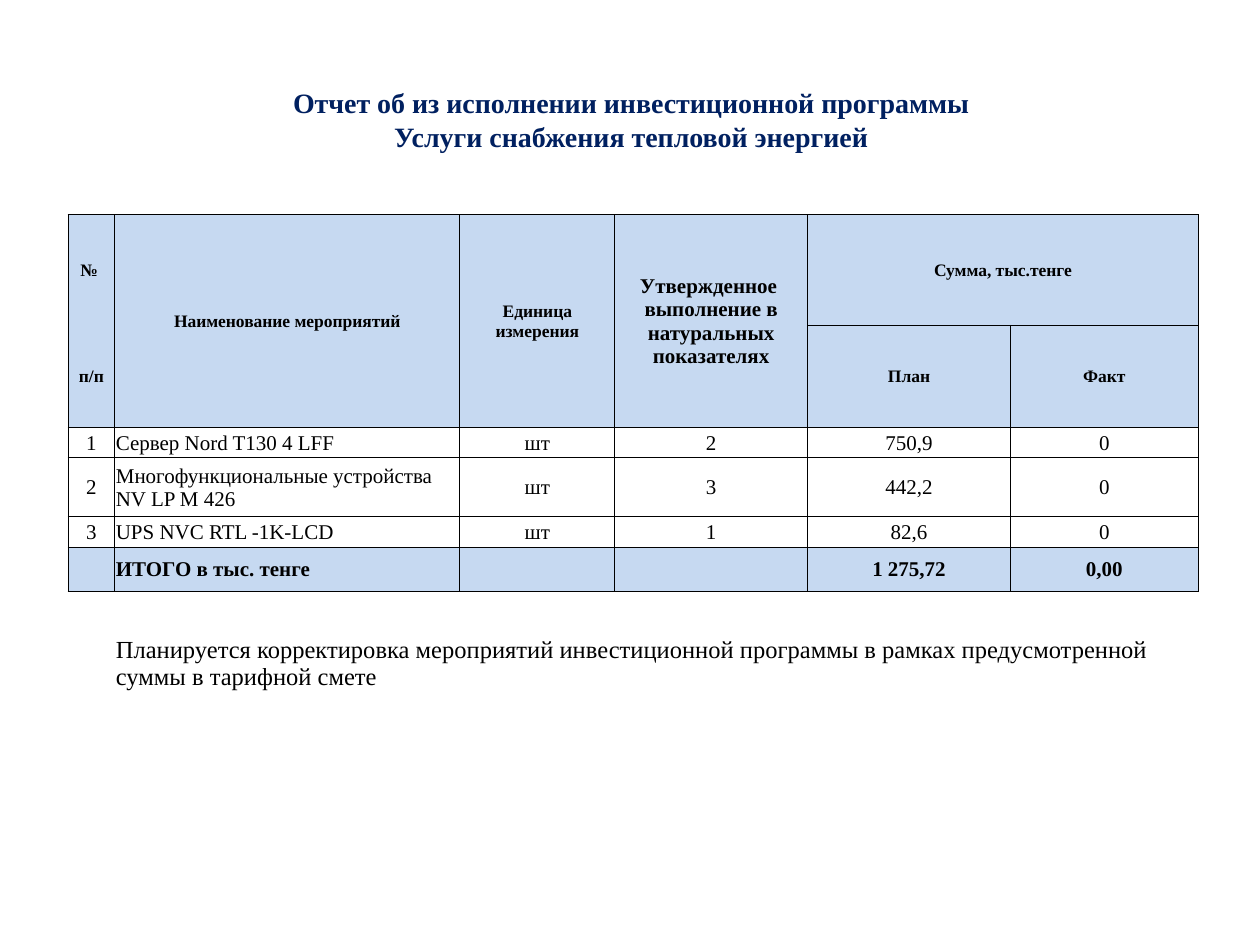
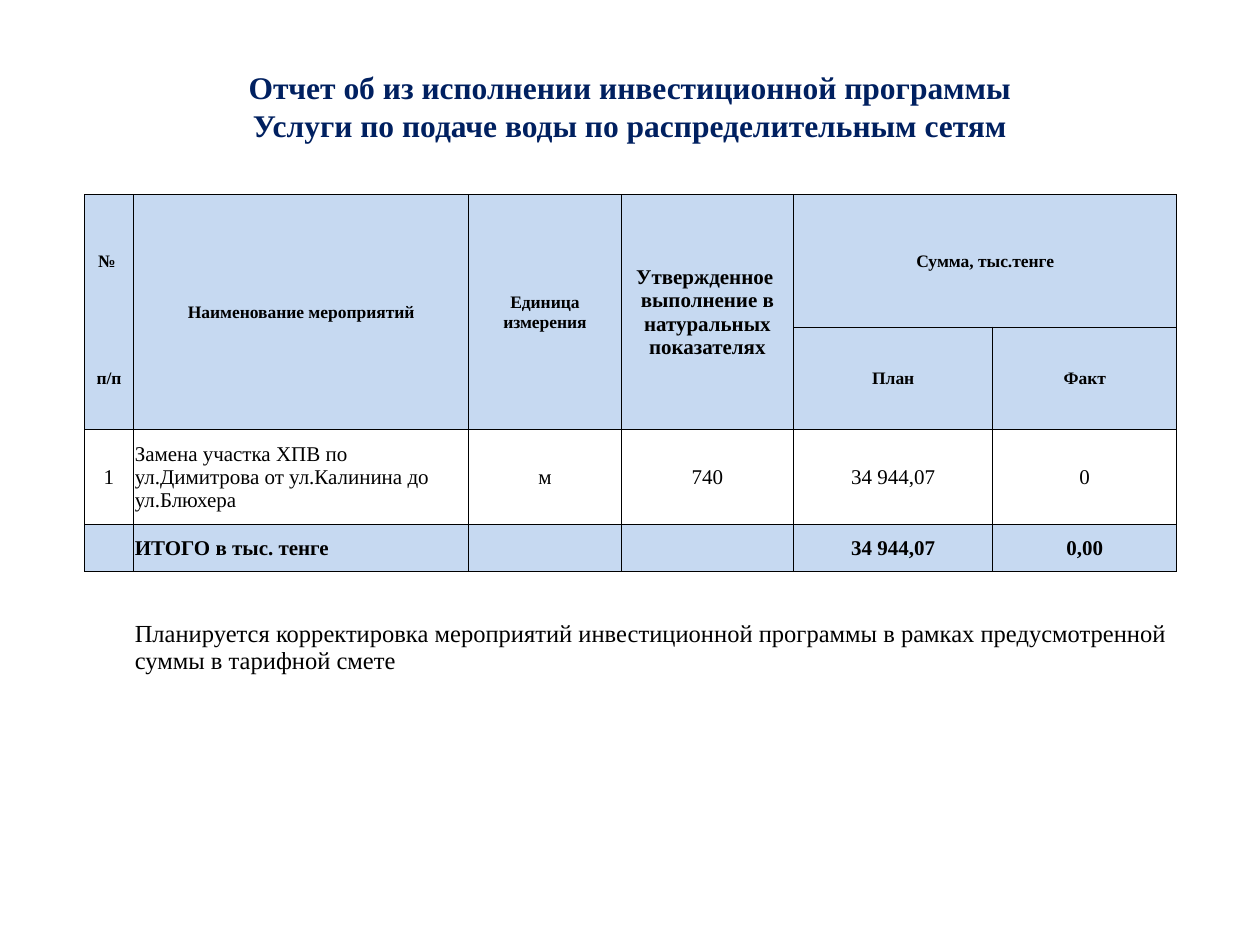
import itertools

import lxml.etree
import pptx
import pptx.dml.color
import pptx.enum.text
import pptx.oxml.ns
import pptx.util

SLIDE_WIDTH = pptx.util.Inches(10)
SLIDE_HEIGHT = pptx.util.Inches(7.5)
FONT_NAME = "Times New Roman"
NAVY, BLACK, PALE_BLUE = "002060", "000000", "C6D9F1"
ALIGN = pptx.enum.text.PP_ALIGN
MIDDLE = pptx.enum.text.MSO_ANCHOR.MIDDLE
ALL_SIDES = "LRTB"

TITLE_START = "Отчет об из исполнении инвестиционной программы"
HEADINGS = [
    ["№ ", "Наименование мероприятий", "Единица измерения",
     "Утвержденное  выполнение в натуральных показателях", "Сумма, тыс.тенге", ""],
    ["п/п", "", "", "", "План", "Факт"],
]
TOTAL_LABEL = "ИТОГО в тыс. тенге"
NOTE = ("Планируется корректировка мероприятий инвестиционной программы "
        "в рамках предусмотренной суммы в тарифной смете")
NOTE_ROWS = 3

REPORTS = [
    {
        "service": "Услуги снабжения тепловой энергией",
        "title_size": 16,
        "title_box": (0.051, 0.08, 0.9, 0.092),
        "table_box": (0.054, 0.227, 0.897, 0.513),
        "columns": [37, 274, 123, 153, 161, 149],
        "rows": [88, 75, 24, 47, 24, 35, 23, 23, 23, 23],
        "items": [
            ["1", "Сервер Nord T130 4 LFF", "шт", "2", "750,9", "0"],
            ["2", "Многофункциональные устройства NV LP M 426", "шт", "3", "442,2", "0"],
            ["3", "UPS NVC RTL -1K-LCD", "шт", "1", "82,6", "0"],
        ],
        "total": "1 275,72",
    },
    {
        "service": "Услуги по подаче воды по распределительным сетям",
        "title_size": 18,
        "title_box": (0.05, 0.04, 0.9, 0.145),
        "table_box": (0.067, 0.206, 0.867, 0.519),
        "columns": [39, 266, 121, 137, 158, 146],
        "rows": [105, 75, 76, 37, 24, 24, 24, 24],
        "items": [
            ["1", "Замена участка ХПВ по ул.Димитрова от ул.Калинина до ул.Блюхера",
             "м", "740", "34 944,07", "0"],
        ],
        "total": "34 944,07",
    },
]


def color(hex_string):
    """Turn a hex string into a colour."""
    return pptx.dml.color.RGBColor.from_string(hex_string)


def place(box):
    """Turn shares of the slide into left, top, width and height."""
    sizes = itertools.cycle((SLIDE_WIDTH, SLIDE_HEIGHT))
    return [round(share * size) for share, size in zip(box, sizes)]


def write_text(text_frame, text, hex_color, align, size, bold):
    """Write one formatted paragraph."""
    paragraph = text_frame.paragraphs[0]
    paragraph.alignment = align
    if not text:
        lxml.etree.SubElement(paragraph._p, pptx.oxml.ns.qn("a:endParaRPr"), sz="1000")
        return
    paragraph.text = text
    formats = {"name": FONT_NAME, "size": pptx.util.Pt(size), "bold": bold}
    for run in paragraph.runs:
        for name, value in formats.items():
            setattr(run.font, name, value)
        run.font.color.rgb = color(hex_color)


def set_borders(cell, drawn_sides):
    """Draw thin black lines on the named sides and clear the others."""
    qualify = pptx.oxml.ns.qn
    properties = cell._tc.get_or_add_tcPr()
    for side in ALL_SIDES:
        line = lxml.etree.SubElement(properties, qualify(f"a:ln{side}"), w=str(pptx.util.Pt(0.5)))
        if side in drawn_sides:
            fill = lxml.etree.SubElement(line, qualify("a:solidFill"))
            lxml.etree.SubElement(fill, qualify("a:srgbClr"), val=BLACK)
        else:
            lxml.etree.SubElement(line, qualify("a:noFill"))


def format_cell(cell, text="", fill=None, sides=ALL_SIDES, align=ALIGN.CENTER, size=12, bold=False):
    """Give a cell its text, margins, borders and fill."""
    margin = pptx.util.Inches(0.01)
    formats = {"margin_left": margin, "margin_right": margin, "margin_top": margin,
               "margin_bottom": 0, "vertical_anchor": MIDDLE}
    for name, value in formats.items():
        setattr(cell, name, value)
    set_borders(cell, sides)
    if fill:
        cell.fill.solid()
        cell.fill.fore_color.rgb = color(fill)
    else:
        cell.fill.background()
    write_text(cell.text_frame, text, BLACK, align, size, bold)


def add_title(slide, box, service, size):
    """Add the two-line centred title."""
    shape = slide.shapes.add_textbox(*place(box))
    shape.text_frame.word_wrap = True
    shape.text_frame.vertical_anchor = MIDDLE
    write_text(shape.text_frame, f"{TITLE_START}\v{service}", NAVY, ALIGN.CENTER, size, True)


def add_grid(slide, box, columns, rows):
    """Add a plain table whose columns and rows share the box by weight."""
    left, top, width, height = place(box)
    table = slide.shapes.add_table(len(rows), len(columns), left, top, width, height).table
    table.first_row = table.horz_banding = False
    for column, weight in zip(table.columns, columns):
        column.width = round(width * weight / sum(columns))
    for row, weight in zip(table.rows, rows):
        row.height = round(height * weight / sum(rows))
    return table


def fill_headings(table):
    """Fill the two heading rows and merge their groups."""
    open_sides = ["LTR", "LRB"]
    for row, headings in enumerate(HEADINGS):
        for column, text in enumerate(headings):
            format_cell(table.cell(row, column), text, PALE_BLUE,
                        ALL_SIDES if column else open_sides[row],
                        size=12 if column == 3 else 10, bold=True)
    for column in (1, 2, 3):
        table.cell(0, column).merge(table.cell(1, column))
    table.cell(0, 4).merge(table.cell(0, 5))


def fill_body(table, items, total):
    """Fill the item rows and the total row."""
    records = items + [["", TOTAL_LABEL, "", "", total, "0,00"]]
    for row, record in enumerate(records, len(HEADINGS)):
        is_total = record is records[-1]
        for column, text in enumerate(record):
            format_cell(table.cell(row, column), text, PALE_BLUE if is_total else None,
                        align=ALIGN.LEFT if column == 1 else ALIGN.CENTER, bold=is_total)


def fill_note(table):
    """Fill the borderless rows below the total with the note."""
    last_row, last_column = len(table.rows) - 1, len(table.columns) - 1
    note_row = last_row - NOTE_ROWS + 1
    for row, column in itertools.product(range(note_row - 1, last_row + 1), range(last_column + 1)):
        format_cell(table.cell(row, column), NOTE if (row, column) == (note_row, 1) else "",
                    sides="T" if row < note_row else "", align=ALIGN.LEFT, size=14)
    table.cell(note_row, 1).merge(table.cell(last_row, last_column))


def add_report(presentation, report):
    """Add one report slide."""
    slide = presentation.slides.add_slide(presentation.slide_layouts[6])
    add_title(slide, report["title_box"], report["service"], report["title_size"])
    table = add_grid(slide, report["table_box"], report["columns"], report["rows"])
    fill_headings(table)
    fill_body(table, report["items"], report["total"])
    fill_note(table)


def main():
    """Build and save the presentation."""
    presentation = pptx.Presentation()
    presentation.slide_width, presentation.slide_height = SLIDE_WIDTH, SLIDE_HEIGHT
    for report in REPORTS:
        add_report(presentation, report)
    presentation.save("out.pptx")


if __name__ == "__main__":
    main()
